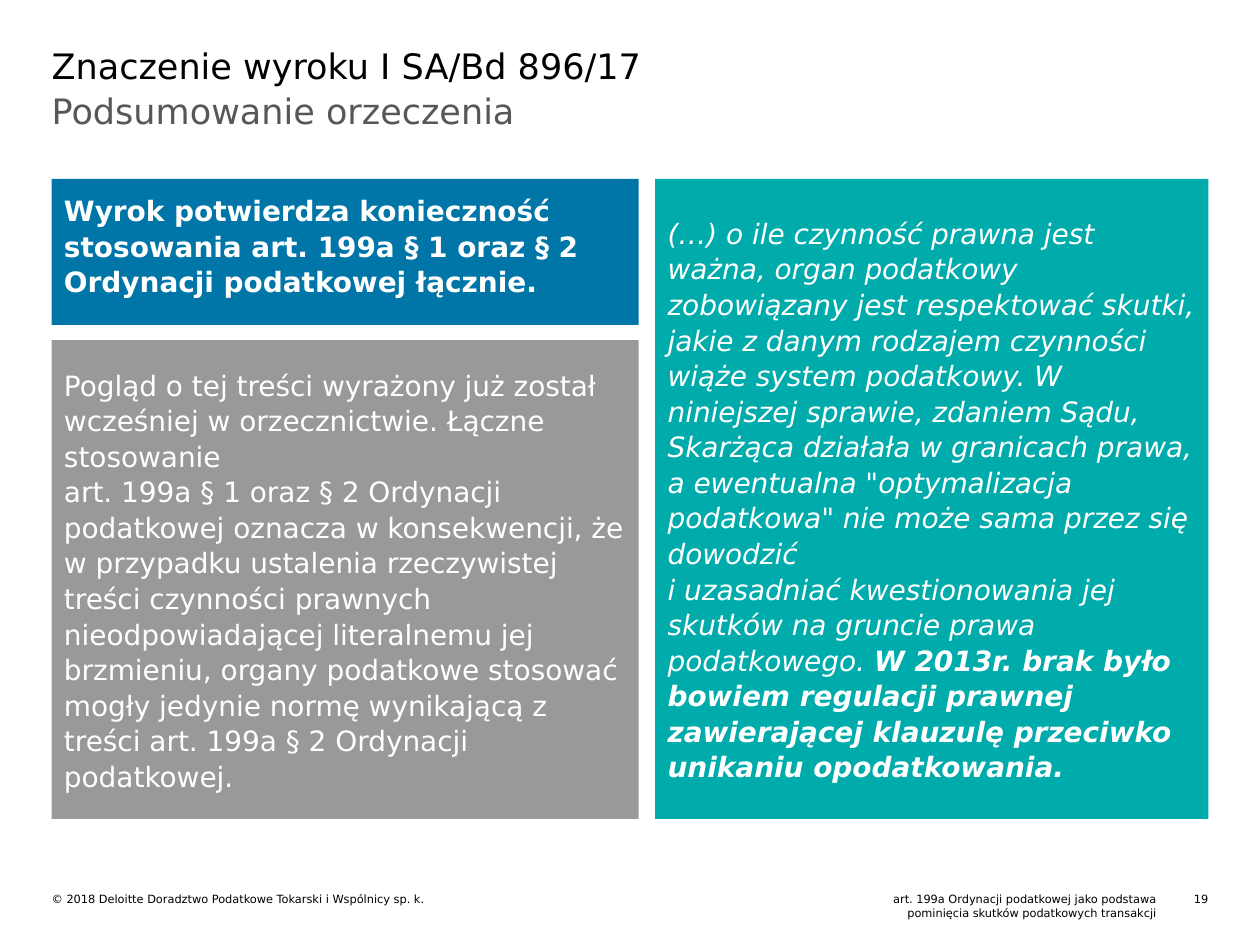
import pptx
import pptx.dml.color
import pptx.enum.shapes
import pptx.enum.text
import pptx.util

Inches = pptx.util.Inches
ALIGN = pptx.enum.text.PP_ALIGN
ANCHOR = pptx.enum.text.MSO_ANCHOR
COLORS = {
    "black": "000000",
    "subtitle": "575757",
    "white": "FFFFFF",
    "blue": "0076A8",
    "grey": "97999B",
    "teal": "00ABAB",
}


def rgb(name):
    return pptx.dml.color.RGBColor.from_string(COLORS[name])


def add_text(para, text, font="DejaVu Sans", size=16, color="white", bold=False, italic=False):
    for index, line in enumerate(text.split("\n")):
        if index:
            para.add_line_break()
        span = para.add_run()
        span.text = line
        span.font.name = font
        span.font.size = pptx.util.Pt(size)
        span.font.color.rgb = rgb(color)
        span.font.bold = bold
        span.font.italic = italic


class SlideBuilder:
    def __init__(self, page):
        self.page = page

    def fill_frame(self, frame, paragraphs, inset, anchor, align, spacing):
        frame.word_wrap = True
        frame.vertical_anchor = anchor
        frame.margin_left = frame.margin_right = Inches(inset)
        frame.margin_top = frame.margin_bottom = Inches(inset)
        for index, spans in enumerate(paragraphs):
            para = frame.add_paragraph() if index else frame.paragraphs[0]
            para.alignment = align
            para.line_spacing = spacing
            for text, style in spans:
                add_text(para, text, **style)

    def label(self, left, top, width, height, text, align=ALIGN.LEFT, **style):
        box = self.page.shapes.add_textbox(*map(Inches, (left, top, width, height)))
        self.fill_frame(box.text_frame, [[(text, style)]], 0, ANCHOR.TOP, align, 1.0)

    def panel(self, left, top, width, height, fill, paragraphs, anchor=ANCHOR.MIDDLE):
        box = self.page.shapes.add_shape(
            pptx.enum.shapes.MSO_SHAPE.RECTANGLE, *map(Inches, (left, top, width, height))
        )
        box.shadow.inherit = False
        box.fill.solid()
        box.fill.fore_color.rgb = rgb(fill)
        box.line.fill.background()
        self.fill_frame(box.text_frame, paragraphs, 0.1, anchor, ALIGN.LEFT, 1.06)


def main():
    deck = pptx.Presentation()
    deck.slide_width, deck.slide_height = Inches(10), Inches(7.5)
    builder = SlideBuilder(deck.slides.add_slide(deck.slide_layouts[6]))

    left, right_column, top, footer_top = 0.41, 5.2, 1.42, 7.08
    left_width, right_width, full_width = 4.66, 4.39, 9.18
    heading = {"size": 20}
    footer = {"size": 6.5, "color": "black"}
    quote = {"italic": True}
    strong_quote = {"italic": True, "bold": True}

    builder.label(left, 0.35, full_width, 0.44, "Znaczenie wyroku I SA/Bd 896/17",
                  color="black", **heading)
    builder.label(left, 0.71, full_width, 0.83, "Podsumowanie orzeczenia",
                  color="subtitle", **heading)

    builder.panel(left, top, left_width, 1.16, "blue", [[(
        "Wyrok potwierdza konieczność stosowania art. 199a § 1 oraz § 2 "
        "Ordynacji podatkowej łącznie.", {"bold": True})]], anchor=ANCHOR.TOP)
    builder.panel(left, 2.7, left_width, 3.8, "grey", [[(
        "Pogląd o tej treści wyrażony już został wcześniej w orzecznictwie. "
        "Łączne stosowanie\nart. 199a § 1 oraz § 2 Ordynacji podatkowej oznacza "
        "w konsekwencji, że w przypadku ustalenia rzeczywistej treści czynności "
        "prawnych nieodpowiadającej literalnemu jej brzmieniu, organy podatkowe "
        "stosować mogły jedynie normę wynikającą z treści art. 199a § 2 "
        "Ordynacji podatkowej.", {})]])
    builder.panel(right_column, top, right_width, 5.08, "teal", [
        [("(…) o ile czynność prawna jest ważna, organ podatkowy zobowiązany jest "
          "respektować skutki, jakie z danym rodzajem czynności wiąże system "
          "podatkowy. W niniejszej sprawie, zdaniem Sądu, Skarżąca działała w "
          "granicach prawa, a ewentualna \"optymalizacja podatkowa\" nie może sama "
          "przez się dowodzić", quote)],
        [("i uzasadniać kwestionowania jej skutków na gruncie prawa podatkowego. ", quote),
         ("W 2013r. brak było bowiem regulacji prawnej zawierającej klauzulę "
          "przeciwko unikaniu opodatkowania.", strong_quote)],
    ])

    builder.label(left, footer_top, right_width, 0.11,
                  "© 2018 Deloitte Doradztwo Podatkowe Tokarski i Wspólnicy sp. k.", **footer)
    builder.label(right_column, footer_top, 3.98, 0.22,
                  "art. 199a Ordynacji podatkowej jako podstawa\n"
                  "pominięcia skutków podatkowych transakcji", align=ALIGN.RIGHT, **footer)
    builder.label(9.34, footer_top, 0.25, 0.11, "19", align=ALIGN.RIGHT, **footer)

    deck.save("out.pptx")


if __name__ == "__main__":
    main()
